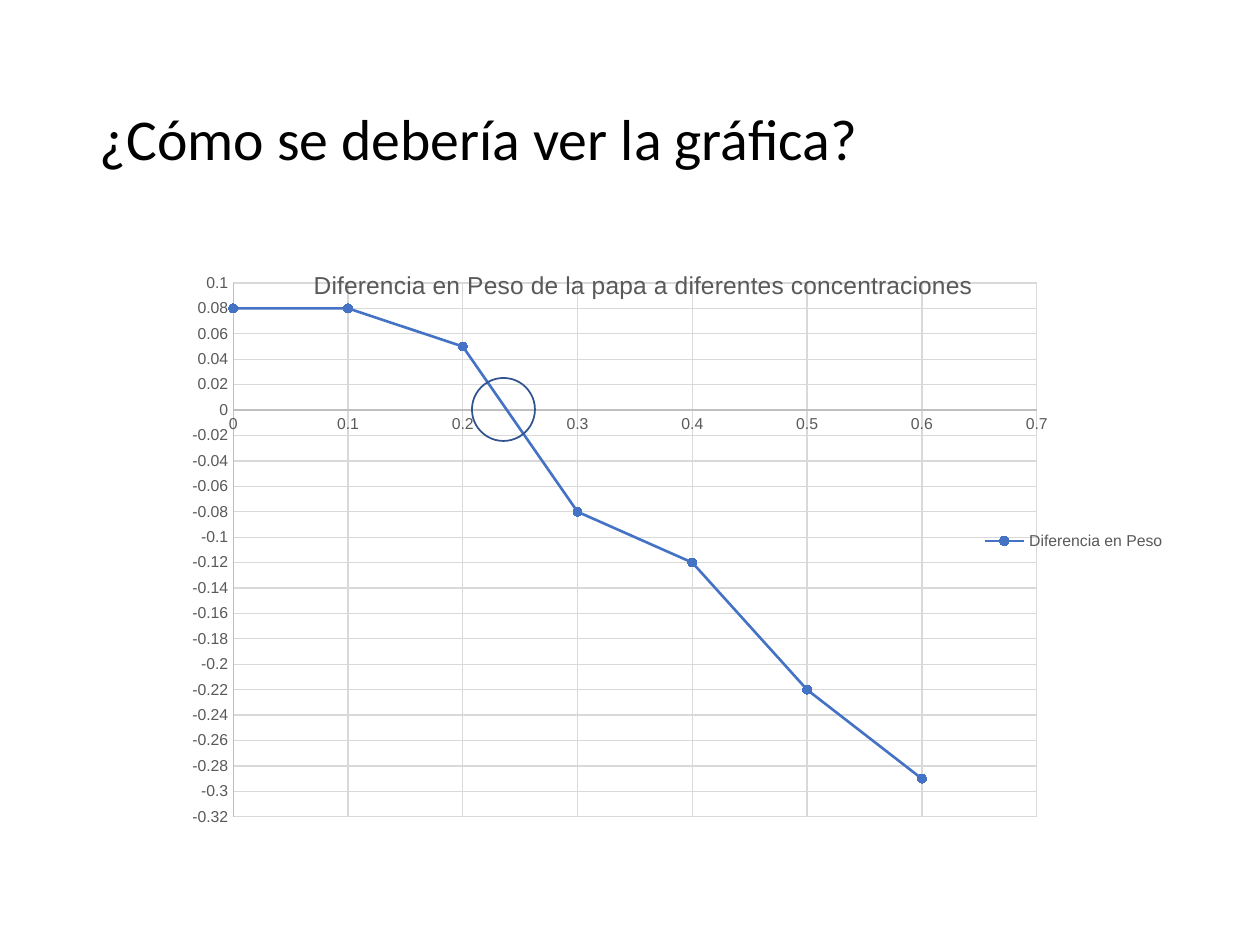
from dataclasses import dataclass

from lxml.etree import SubElement
from pptx import Presentation
from pptx.chart.data import XyChartData
from pptx.dml.color import RGBColor
from pptx.enum.chart import (XL_CHART_TYPE, XL_LEGEND_POSITION, XL_MARKER_STYLE,
                             XL_TICK_MARK)
from pptx.enum.shapes import MSO_SHAPE
from pptx.enum.text import MSO_ANCHOR, MSO_AUTO_SIZE, PP_ALIGN
from pptx.oxml.ns import qn
from pptx.util import Emu, Pt


@dataclass(frozen=True)
class Theme:
    black: RGBColor = RGBColor.from_string("000000")
    gray: RGBColor = RGBColor.from_string("595959")
    axis: RGBColor = RGBColor.from_string("BFBFBF")
    grid: RGBColor = RGBColor.from_string("D9D9D9")
    series: RGBColor = RGBColor.from_string("4472C4")
    circle: RGBColor = RGBColor.from_string("31538F")
    heading_font: str = "Calibri"
    chart_font: str = "Arial"
    heading_size: Pt = Pt(33)
    chart_title_size: Pt = Pt(14)
    label_size: Pt = Pt(9)


THEME = Theme()
PX = 914400 / 126


def box(*lengths):
    """Turn lengths in px into EMU."""
    return [Emu(round(length * PX)) for length in lengths]


def place_in_chart(element, position, inner=False):
    """Give a chart part a manual layout, in fractions of the chart."""
    layout = element.find(qn("c:layout"))
    if layout is None:
        layout = SubElement(element, qn("c:layout"))
        element.insert(1 if element.find(qn("c:tx")) is not None else 0, layout)
    manual = SubElement(layout, qn("c:manualLayout"))
    settings = {"layoutTarget": "inner"} if inner else {}
    settings.update(xMode="edge", yMode="edge", **position)
    for name, value in settings.items():
        SubElement(manual, qn(f"c:{name}")).set("val", str(value))


presentation = Presentation()
presentation.slide_width, presentation.slide_height = box(1260, 945)
slide = presentation.slides.add_slide(presentation.slide_layouts[5])

# Heading
heading = slide.shapes.title
heading.left, heading.top, heading.width, heading.height = box(87, 50, 1086, 183)
text_frame = heading.text_frame
text_frame.text = "¿Cómo se debería ver la gráfica?"
text_frame.auto_size = MSO_AUTO_SIZE.NONE
text_frame.vertical_anchor = MSO_ANCHOR.MIDDLE
paragraph = text_frame.paragraphs[0]
paragraph.alignment = PP_ALIGN.LEFT
paragraph.line_spacing = 0.9
font = paragraph.runs[0].font
font.name, font.size = THEME.heading_font, THEME.heading_size
font.color.rgb = THEME.black

# Weight difference against concentration
chart_data = XyChartData()
weight_series = chart_data.add_series("Diferencia en Peso")
for step, difference in enumerate([0.08, 0.08, 0.05, -0.08, -0.12, -0.22, -0.29]):
    weight_series.add_data_point(step / 10, difference)
chart = slide.shapes.add_chart(
    XL_CHART_TYPE.XY_SCATTER_LINES, *box(92, 241, 1086, 600), chart_data).chart
chart.font.name, chart.font.size = THEME.chart_font, THEME.label_size
chart.font.color.rgb = THEME.gray

chart.has_title = True
title_frame = chart.chart_title.text_frame
title_frame.text = "Diferencia en Peso de la papa a diferentes concentraciones"
font = title_frame.paragraphs[0].runs[0].font
font.name, font.size, font.bold = THEME.chart_font, THEME.chart_title_size, False
font.color.rgb = THEME.gray
chart.chart_title.include_in_layout = False if hasattr(
    chart.chart_title, "include_in_layout") else None
place_in_chart(chart.chart_title._element, {"x": 0.2, "y": 0.04})

chart.has_legend = True
chart.legend.position = XL_LEGEND_POSITION.RIGHT
chart.legend.include_in_layout = False
chart.legend.font.name, chart.legend.font.size = THEME.chart_font, THEME.label_size
chart.legend.font.color.rgb = THEME.gray

for axis, low, high, unit in [(chart.category_axis, 0, 0.7, 0.1),
                              (chart.value_axis, -0.32, 0.1, 0.02)]:
    axis.minimum_scale, axis.maximum_scale, axis.major_unit = low, high, unit
    axis.major_tick_mark = axis.minor_tick_mark = XL_TICK_MARK.NONE
    axis.has_major_gridlines = True
    for line, color in [(axis.format.line, THEME.axis),
                        (axis.major_gridlines.format.line, THEME.grid)]:
        line.color.rgb, line.width = color, Pt(0.75)
    labels = axis.tick_labels
    labels.number_format, labels.number_format_is_linked = "General", False
    labels.font.name, labels.font.size = THEME.chart_font, THEME.label_size
    labels.font.color.rgb = THEME.gray

plot = chart.plots[0]
plot.vary_by_categories = False
series = plot.series[0]
series.smooth = False if hasattr(series, "smooth") else None
series.format.line.color.rgb, series.format.line.width = THEME.series, Pt(1.5)
series.marker.style, series.marker.size = XL_MARKER_STYLE.CIRCLE, 5
series.marker.format.fill.solid()
series.marker.format.fill.fore_color.rgb = THEME.series
series.marker.format.line.color.rgb = THEME.series
place_in_chart(chart._chartSpace.chart.plotArea,
               {"x": 0.13, "y": 0.07, "w": 0.74, "h": 0.89}, inner=True)

# Circle where the line crosses zero
circle = slide.shapes.add_shape(MSO_SHAPE.OVAL, *box(472, 378, 63, 63))
circle.shadow.inherit = False
circle.fill.background()
circle.line.color.rgb, circle.line.width = THEME.circle, Pt(1)

presentation.save("out.pptx")
